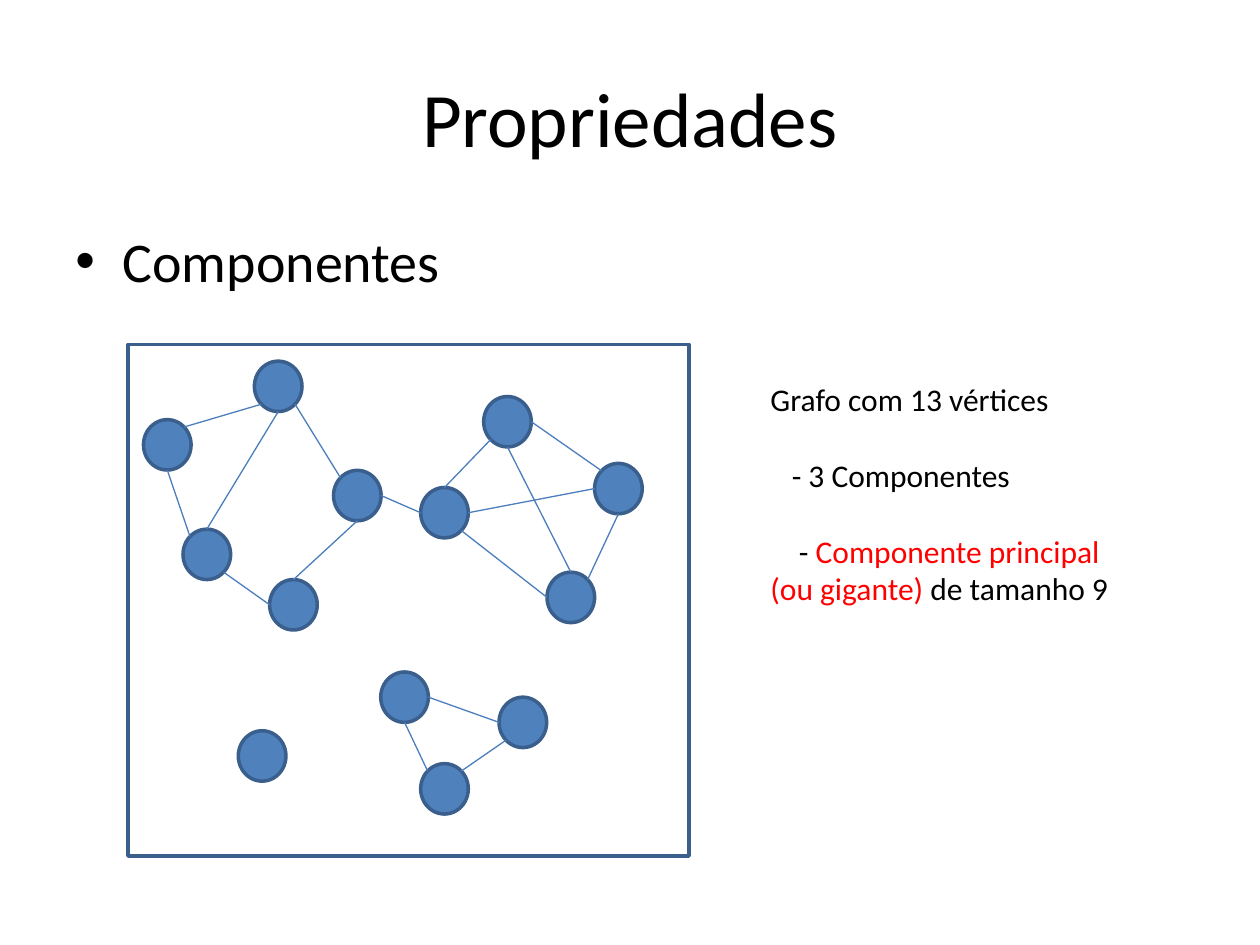
from math import cos, radians, sin
from typing import NamedTuple

from lxml import etree
from pptx import Presentation
from pptx.dml.color import RGBColor
from pptx.enum.shapes import MSO_CONNECTOR, MSO_SHAPE
from pptx.enum.text import MSO_ANCHOR, PP_ALIGN
from pptx.oxml.ns import qn
from pptx.util import Pt

OVAL, RECTANGLE = MSO_SHAPE.OVAL, MSO_SHAPE.RECTANGLE
STRAIGHT = MSO_CONNECTOR.STRAIGHT
LEFT, CENTER = PP_ALIGN.LEFT, PP_ALIGN.CENTER
TOP, MIDDLE = MSO_ANCHOR.TOP, MSO_ANCHOR.MIDDLE

FONT = "Calibri"
BLACK, RED = "000000", "FF0000"
VERTEX_FILL, OUTLINE, EDGE_COLOR = "4F81BD", "3A5F8C", "4B7EBC"
VERTEX_WIDTH, VERTEX_HEIGHT = 27.2, 28.8

# Compass points on a vertex, in degrees clockwise from east
ANGLES = {"E": 0, "SE": 45, "S": 90, "SW": 135, "W": 180, "NW": 225, "N": 270, "NE": 315}


class Vertex(NamedTuple):
    left: float
    top: float

    def point(self, side: str) -> tuple[float, float]:
        angle = radians(ANGLES[side])
        return (self.left + VERTEX_WIDTH / 2 * (1 + cos(angle)),
                self.top + VERTEX_HEIGHT / 2 * (1 + sin(angle)))


class Edge(NamedTuple):
    start: str
    start_side: str
    end: str
    end_side: str


VERTICES = {
    # Giant component
    "a": Vertex(82, 239.8), "b": Vertex(154.1, 331.2), "c": Vertex(190.6, 268.8),
    "d": Vertex(104.6, 302.4), "e": Vertex(145.4, 206.4), "f": Vertex(240.4, 278.6),
    "g": Vertex(312.6, 327), "h": Vertex(339.8, 264.8), "i": Vertex(276.4, 226.6),
    # Triangle
    "j": Vertex(217.6, 384), "k": Vertex(285.2, 398.4), "m": Vertex(240.4, 436.4),
    # Isolated vertex
    "l": Vertex(136.2, 417.6),
}

EDGES = [
    Edge("a", "NE", "e", "SW"), Edge("e", "S", "d", "N"), Edge("a", "S", "d", "NW"),
    Edge("e", "SE", "c", "NW"), Edge("d", "SE", "b", "W"), Edge("b", "N", "c", "S"),
    Edge("c", "E", "f", "W"), Edge("f", "N", "i", "SW"), Edge("i", "E", "h", "NW"),
    Edge("f", "SE", "g", "W"), Edge("h", "S", "g", "NE"), Edge("i", "S", "g", "N"),
    Edge("f", "E", "h", "W"), Edge("j", "E", "k", "W"), Edge("m", "NE", "k", "SW"),
    Edge("m", "NW", "j", "S"),
]


def color(value: str) -> RGBColor:
    return RGBColor.from_string(value)


def place(shape, left: float, top: float, width: float, height: float) -> None:
    shape.left, shape.top = Pt(left), Pt(top)
    shape.width, shape.height = Pt(width), Pt(height)


def add_box(page, left: float, top: float, width: float, height: float):
    box = page.shapes.add_textbox(Pt(left), Pt(top), Pt(width), Pt(height))
    box.text_frame.word_wrap = True
    return box


def write(para, *spans: tuple[str, str], size: float, align=LEFT, before: float = 0,
          margin: float = 0, indent: float = 0, bullet: str = "") -> None:
    """Write (text, color) spans into a paragraph."""
    para.alignment = align
    para.space_before = Pt(before)
    properties = para._p.get_or_add_pPr()
    properties.set("marL", str(Pt(margin)))
    properties.set("indent", str(Pt(indent)))
    if bullet:
        etree.SubElement(properties, qn("a:buFont"), typeface="Arial")
        etree.SubElement(properties, qn("a:buChar"), char=bullet)
    for text, hue in spans:
        span = para.add_run()
        span.text = text
        span.font.name, span.font.size = FONT, Pt(size)
        span.font.color.rgb = color(hue)


def add_shape(page, kind, left: float, top: float, width: float, height: float,
              fill: str = "") -> None:
    shape = page.shapes.add_shape(kind, Pt(left), Pt(top), Pt(width), Pt(height))
    shape.shadow.inherit = False
    if fill:
        shape.fill.solid()
        shape.fill.fore_color.rgb = color(fill)
    else:
        shape.fill.background()
    shape.line.color.rgb = color(OUTLINE)
    shape.line.width = Pt(2)


def add_edge(page, edge: Edge) -> None:
    start = VERTICES[edge.start].point(edge.start_side)
    end = VERTICES[edge.end].point(edge.end_side)
    line = page.shapes.add_connector(STRAIGHT, *(Pt(value) for value in start + end))
    line.line.color.rgb = color(EDGE_COLOR)
    line.line.width = Pt(0.75)
    etree.SubElement(line._element.spPr, qn("a:effectLst"))


def main() -> None:
    deck = Presentation()
    deck.slide_width, deck.slide_height = Pt(720), Pt(540)
    page = deck.slides.add_slide(deck.slide_layouts[5])

    # Title
    title = page.shapes.title
    place(title, 36, 21.6, 648, 90)
    title.text_frame.vertical_anchor = MIDDLE
    write(title.text_frame.paragraphs[0], ("Propriedades", BLACK), size=44, align=CENTER)

    # Topic
    topic = add_box(page, 36, 126, 648, 314)
    topic.text_frame.vertical_anchor = TOP
    write(topic.text_frame.paragraphs[0], ("Componentes", BLACK), size=32,
          before=6.4, margin=27, indent=-27, bullet="•")

    # Graph
    for vertex in VERTICES.values():
        add_shape(page, OVAL, vertex.left, vertex.top, VERTEX_WIDTH, VERTEX_HEIGHT, VERTEX_FILL)
    for edge in EDGES:
        add_edge(page, edge)
    add_shape(page, RECTANGLE, 73.2, 196.8, 320.6, 292.4)

    # Description
    description = add_box(page, 433.2, 213.8, 225.4, 138.2).text_frame
    write(description.paragraphs[0], ("Grafo com 13 vértices", BLACK), size=18)
    write(description.add_paragraph(), ("- 3 Componentes", BLACK),
          size=18, before=21.6, indent=12.2)
    write(description.add_paragraph(), ("- ", BLACK),
          ("Componente principal (ou gigante)", RED), (" de tamanho 9", BLACK),
          size=18, before=21.6, indent=16.3)

    deck.save("out.pptx")


if __name__ == "__main__":
    main()
